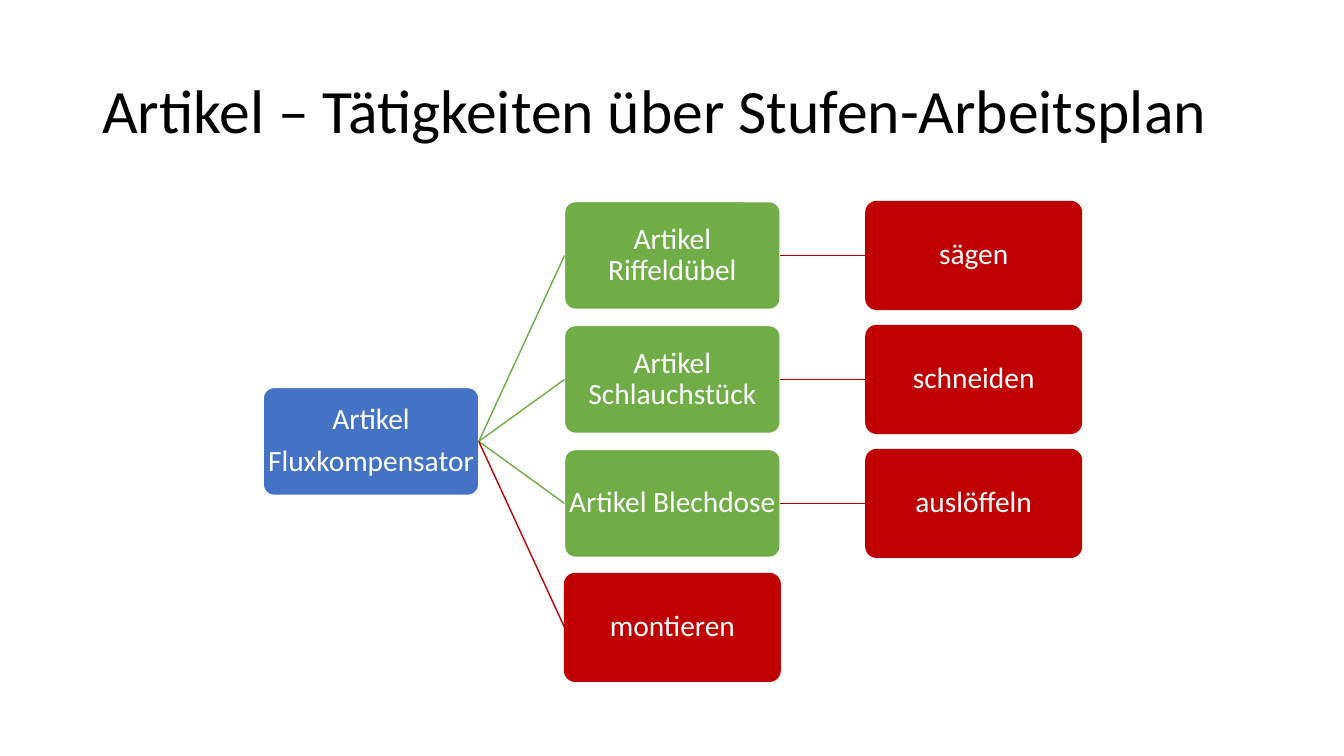
from pptx import Presentation
from pptx.dml.color import RGBColor
from pptx.enum.shapes import MSO_CONNECTOR as Connector, MSO_SHAPE as Shape
from pptx.enum.text import MSO_ANCHOR as Anchor, PP_ALIGN as Align
from pptx.oxml.xmlchemy import OxmlElement
from pptx.util import Pt

TITLE = "Artikel – Tätigkeiten über Stufen-Arbeitsplan"
PRODUCT = "Artikel\nFluxkompensator"
STEPS = [
    ("Artikel Riffeldübel", "sägen"),
    ("Artikel Schlauchstück", "schneiden"),
    ("Artikel Blechdose", "auslöffeln"),
    ("montieren", None),
]

BLUE, GREEN, RED = "4472C4", "70AD47", "C00000"
WHITE, BLACK = "FFFFFF", "000000"
FONT = "Calibri"
LEFT, TOP = 188, 144
BOX_WIDTH, BOX_HEIGHT = 154, 77
COLUMN_STEP, ROW_STEP = 215.25, 88.55
RIGHT_SIDE, LEFT_SIDE = 3, 1


def color(hex_code):
    return RGBColor.from_string(hex_code)


def write(frame, text, size, ink, align, gap=0):
    frame.text = text
    frame.word_wrap = True
    frame.vertical_anchor = Anchor.MIDDLE
    for paragraph in frame.paragraphs:
        paragraph.alignment = align
        paragraph.line_spacing = 0.9
        paragraph.space_after = Pt(gap)
        for run in paragraph.runs:
            run.font.name = FONT
            run.font.size = Pt(size)
            run.font.color.rgb = color(ink)


def add_node(slide, text, column, row, fill, border):
    node = slide.shapes.add_shape(
        Shape.ROUNDED_RECTANGLE,
        Pt(LEFT + column * COLUMN_STEP), Pt(TOP + row * ROW_STEP),
        Pt(BOX_WIDTH), Pt(BOX_HEIGHT))
    node.adjustments[0] = 0.1
    node.shadow.inherit = False
    node.fill.solid()
    node.fill.fore_color.rgb = color(fill)
    node.line.color.rgb = color(border)
    node.line.width = Pt(1)
    frame = node.text_frame
    frame.margin_left = frame.margin_right = Pt(0.6)
    frame.margin_top = frame.margin_bottom = Pt(0.6)
    write(frame, text, 21, WHITE, Align.CENTER, gap=7.35)
    return node


def link(slide, parent, child, stroke):
    branch = slide.shapes.add_connector(Connector.STRAIGHT, 0, 0, 0, 0)
    branch.begin_connect(parent, RIGHT_SIDE)
    branch.end_connect(child, LEFT_SIDE)
    branch.line.color.rgb = color(stroke)
    branch.line.width = Pt(1)
    branch._element.spPr.append(OxmlElement("a:effectLst"))


def main():
    deck = Presentation()
    deck.slide_width, deck.slide_height = Pt(960), Pt(540)
    slide = deck.slides.add_slide(deck.slide_layouts[6])

    title = slide.shapes.add_textbox(Pt(66), Pt(28.75), Pt(828), Pt(104.4))
    write(title.text_frame, TITLE, 44, BLACK, Align.LEFT)

    middle_row = (len(STEPS) - 1) / 2
    product = add_node(slide, PRODUCT, 0, middle_row, BLUE, WHITE)
    for row, (part, activity) in enumerate(STEPS):
        fill, border = (GREEN, WHITE) if activity else (RED, RED)
        part_node = add_node(slide, part, 1, row, fill, border)
        link(slide, product, part_node, fill)
        if activity:
            activity_node = add_node(slide, activity, 2, row, RED, RED)
            link(slide, part_node, activity_node, RED)

    deck.save("out.pptx")


if __name__ == "__main__":
    main()
